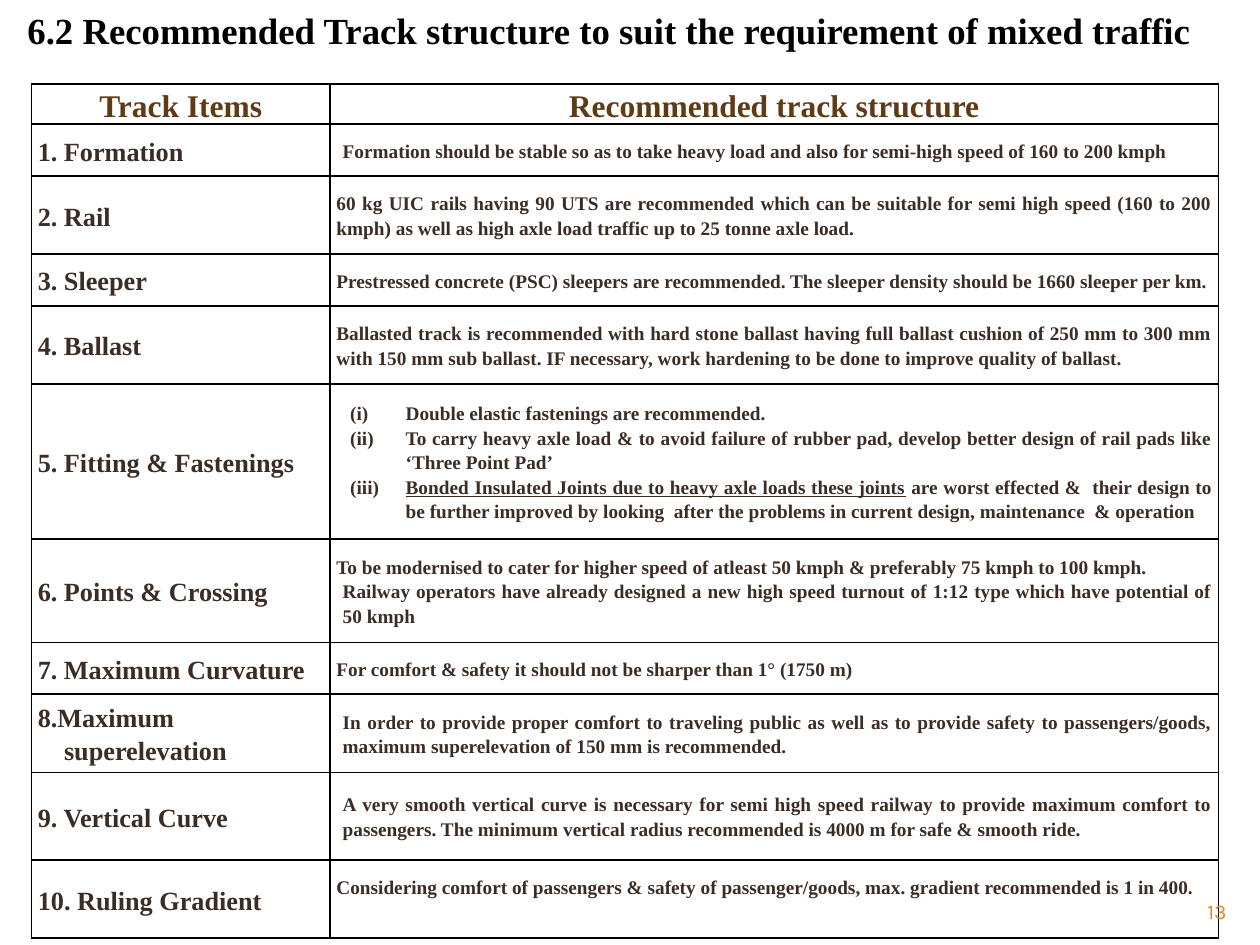
from lxml.etree import SubElement
from pptx import Presentation
from pptx.dml.color import RGBColor
from pptx.enum.text import MSO_ANCHOR, PP_ALIGN
from pptx.oxml.ns import qn
from pptx.util import Pt

# Content: each row is (item paragraphs, recommendation paragraphs, row height)
# A paragraph is a text, or a pair of text and its layout
TITLE = "6.2 Recommended Track structure to suit the requirement of mixed traffic"
PAGE_NUMBER = "13"
HEADERS = ["Track Items", "Recommended track structure"]
HEADER_HEIGHT = 23
COLUMN_WIDTHS = [170.64, 507.6]
SERIF = "Times New Roman"
BROWN, DARK, BLACK, ORANGE = "603A14", "3B2C24", "000000", "D48F29"
ONE_LINE, TWO_LINES = 29.6, 44.6

INDENTED = {"left": 3.6}
HANGING = {"left": 3.6, "first": -3.6}
LISTED = {"left": 39.6, "first": -31.7, "numbering": "romanLcParenBoth"}

ROWS = [
    (["1. Formation"],
     [("Formation should be stable so as to take heavy load and also for semi-high "
       "speed of 160 to 200 kmph", {"left": 3.6, "align": PP_ALIGN.LEFT})], ONE_LINE),
    (["2. Rail"],
     ["60 kg UIC rails having 90 UTS are recommended which can be suitable for semi "
      "high speed (160 to 200 kmph) as well as high axle load traffic up to 25 tonne "
      "axle load."], TWO_LINES),
    (["3. Sleeper"],
     ["Prestressed concrete (PSC) sleepers are recommended. The sleeper density should "
      "be 1660 sleeper per km."], ONE_LINE),
    (["4. Ballast"],
     ["Ballasted track is recommended with hard stone ballast having full ballast "
      "cushion of 250 mm to 300 mm with 150 mm sub ballast. IF necessary, work "
      "hardening to be done to improve quality of ballast."], TWO_LINES),
    (["5. Fitting & Fastenings"],
     [("Double elastic fastenings are recommended.", LISTED),
      ("To carry heavy axle load & to avoid failure of rubber pad, develop better "
       "design of rail pads like ‘Three Point Pad’", LISTED),
      (" are worst effected &  their design to be further improved by looking  after "
       "the problems in current design, maintenance  & operation",
       LISTED | {"underlined_lead":
                 "Bonded Insulated Joints due to heavy axle loads these joints"})], 88.8),
    (["6. Points & Crossing"],
     [("To be modernised to cater for higher speed of atleast 50 kmph & preferably "
       "75 kmph to 100 kmph.", HANGING),
      ("Railway operators have already designed a new high speed turnout of 1:12 type "
       "which have potential of 50 kmph", INDENTED)], 59),
    (["7. Maximum Curvature"],
     ["For comfort & safety it should not be sharper than 1° (1750 m)"], ONE_LINE),
    (["8.Maximum", ("superelevation", {"left": 15})],
     [("In order to provide proper comfort to traveling public as well as to provide "
       "safety to passengers/goods, maximum superelevation of 150 mm is recommended.",
       INDENTED)], TWO_LINES),
    (["9. Vertical Curve"],
     [("A very smooth vertical curve is necessary for semi high speed railway to "
       "provide maximum comfort to passengers. The minimum vertical radius recommended "
       "is 4000 m for safe & smooth ride.", INDENTED)], 50.2),
    (["10. Ruling Gradient"],
     ["Considering comfort of passengers & safety of passenger/goods, max. gradient "
      "recommended is 1 in 400."], TWO_LINES),
]


def color(value):
    return RGBColor.from_string(value)


def write(paragraph, text, size=11, font=SERIF, ink=DARK, bold=True,
          align=PP_ALIGN.JUSTIFY, spacing=None, left=0, first=0, numbering=None,
          underlined_lead=None):
    paragraph.alignment = align
    if spacing:
        paragraph.line_spacing = spacing
    properties = paragraph._p.get_or_add_pPr()
    properties.set("marL", str(int(Pt(left))))
    properties.set("indent", str(int(Pt(first))))
    if numbering:
        SubElement(properties, qn("a:buFont"), typeface="+mj-lt")
        SubElement(properties, qn("a:buAutoNum"), type=numbering)
    for part, underline in ((underlined_lead, True), (text, False)):
        if part:
            run = paragraph.add_run()
            run.text = part
            run.font.size = Pt(size)
            run.font.name = font
            run.font.bold = bold
            run.font.underline = underline
            run.font.color.rgb = color(ink)


def add_text(slide, text, left, top, width, height, bottom=3.6,
             anchor=MSO_ANCHOR.TOP, **style):
    frame = slide.shapes.add_textbox(Pt(left), Pt(top), Pt(width), Pt(height)).text_frame
    frame.word_wrap = True
    frame.vertical_anchor = anchor
    frame.margin_bottom = Pt(bottom)
    write(frame.paragraphs[0], text, **style)


def fill_cell(cell, paragraphs, **style):
    cell.vertical_anchor = MSO_ANCHOR.MIDDLE
    cell.margin_left = cell.margin_right = Pt(3.6)
    cell.margin_top = cell.margin_bottom = 0
    properties = cell._tc.get_or_add_tcPr()
    for side in ("lnL", "lnR", "lnT", "lnB"):
        line = SubElement(properties, qn("a:" + side), w=str(int(Pt(1))))
        SubElement(SubElement(line, qn("a:solidFill")), qn("a:srgbClr"), val=BLACK)
    cell.fill.background()
    frame = cell.text_frame
    for index, entry in enumerate(paragraphs):
        text, layout = (entry, {}) if isinstance(entry, str) else entry
        paragraph = frame.add_paragraph() if index else frame.paragraphs[0]
        write(paragraph, text, **({"spacing": 1.15} | style | layout))


def add_track_table(slide):
    heights = [HEADER_HEIGHT] + [height for _, _, height in ROWS]
    table = slide.shapes.add_table(
        len(heights), len(COLUMN_WIDTHS), Pt(18), Pt(48),
        Pt(sum(COLUMN_WIDTHS)), Pt(sum(heights))).table
    table.first_row = table.horz_banding = False
    for column, width in zip(table.columns, COLUMN_WIDTHS):
        column.width = Pt(width)
    for row, height in zip(table.rows, heights):
        row.height = Pt(height)
    for column, header in enumerate(HEADERS):
        fill_cell(table.cell(0, column), [header], size=18, ink=BROWN,
                  align=PP_ALIGN.CENTER)
    for row, (item, recommendation, _) in enumerate(ROWS, start=1):
        fill_cell(table.cell(row, 0), item, size=15)
        fill_cell(table.cell(row, 1), recommendation)
    # The last recommendation sits above the middle of its row
    table.cell(len(ROWS), 1).margin_bottom = Pt(14.5)


def main():
    presentation = Presentation()
    presentation.slide_width, presentation.slide_height = Pt(720), Pt(540)
    slide = presentation.slides.add_slide(presentation.slide_layouts[6])
    add_track_table(slide)
    # Title and page number
    add_text(slide, TITLE, 0, 0, 696, 58, bottom=28, anchor=MSO_ANCHOR.MIDDLE,
             size=21, ink=BLACK, align=PP_ALIGN.CENTER)
    add_text(slide, PAGE_NUMBER, 648, 510, 60, 19.4, size=12, font="Karla",
             ink=ORANGE, bold=False, align=PP_ALIGN.RIGHT)
    presentation.save("out.pptx")


if __name__ == "__main__":
    main()
